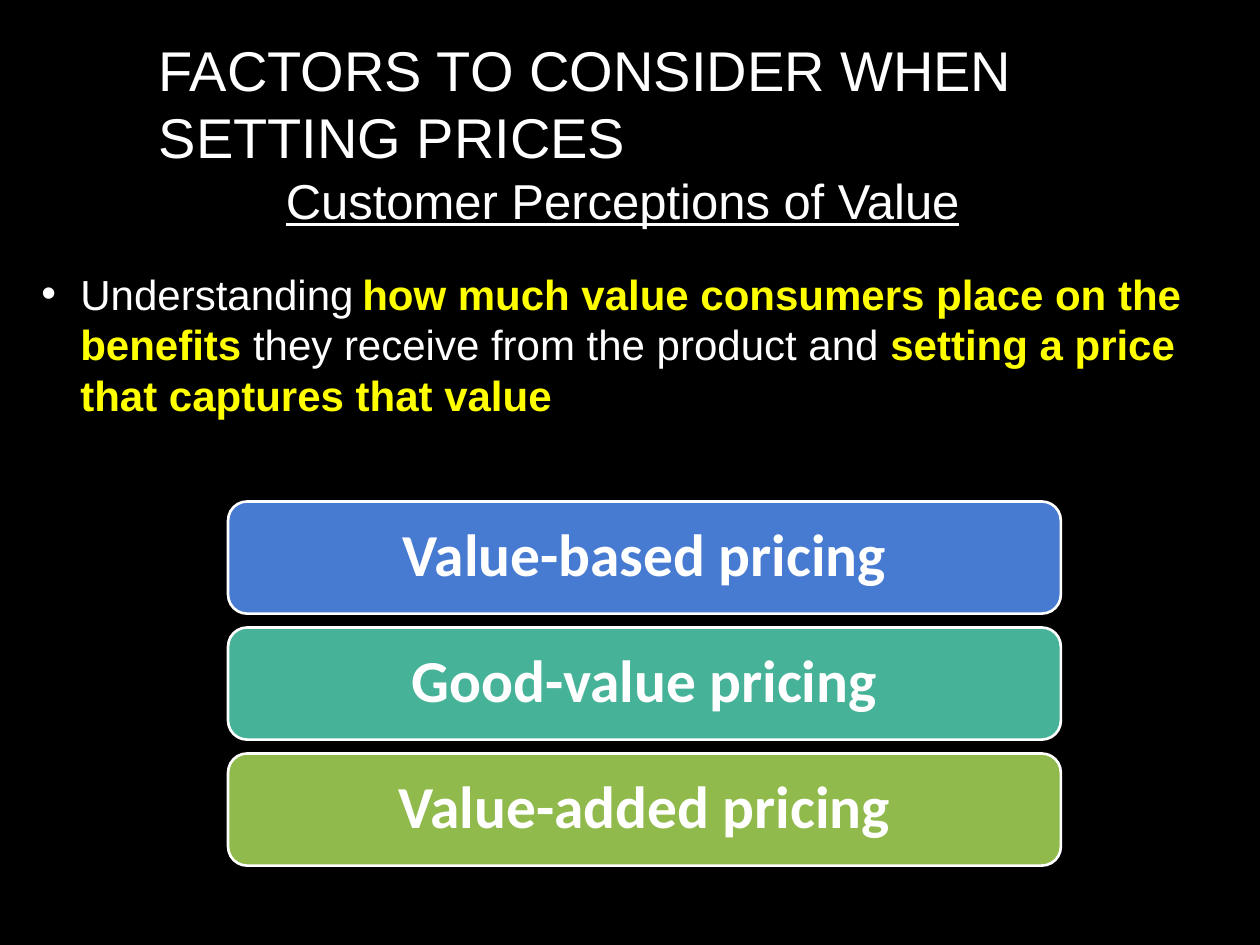
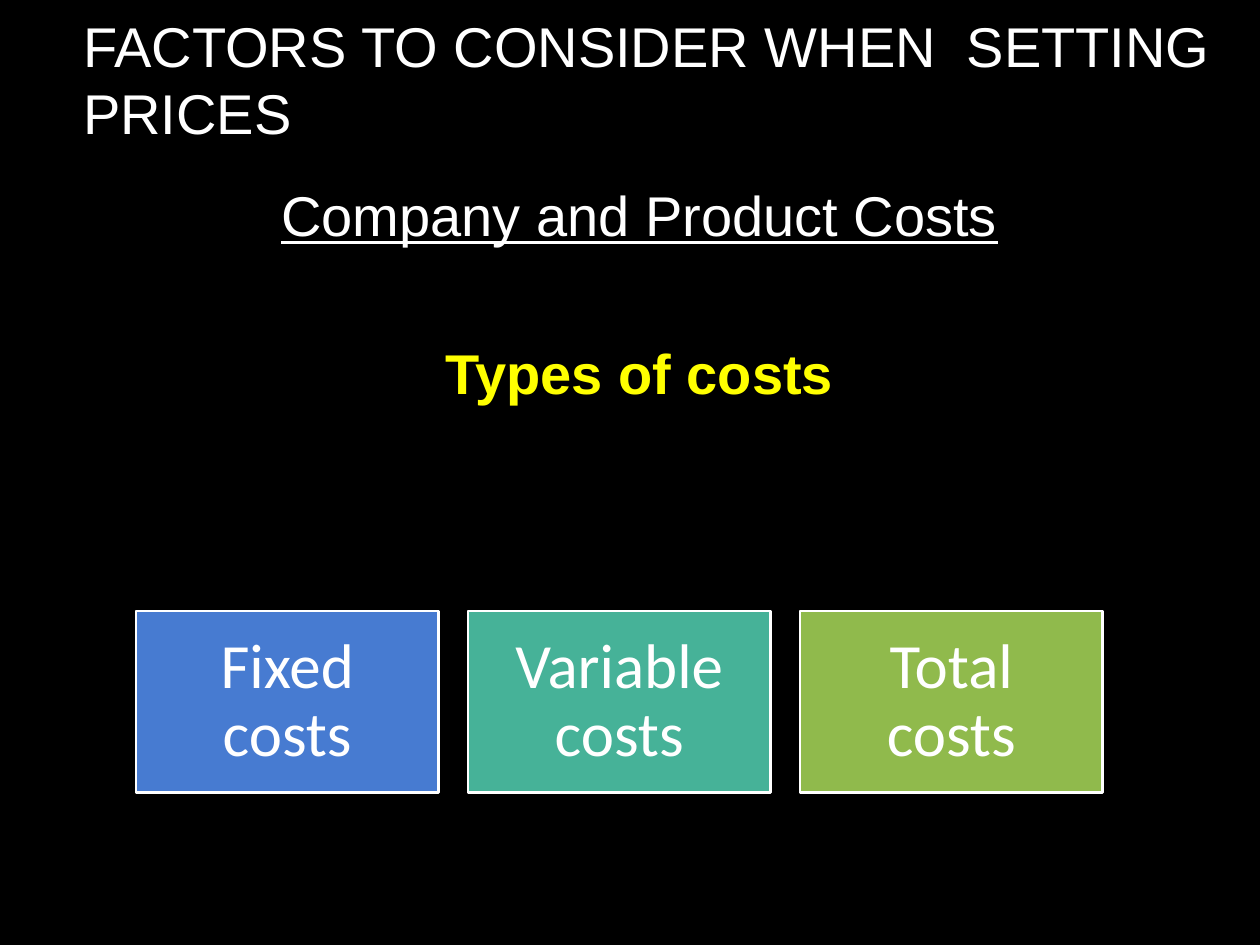
from lxml import etree
from pptx import Presentation
from pptx.dml.color import RGBColor
from pptx.enum.shapes import MSO_SHAPE as Shape
from pptx.enum.text import MSO_ANCHOR as Anchor, MSO_AUTO_SIZE as AutoSize, PP_ALIGN as Align
from pptx.oxml.ns import qn
from pptx.util import Inches, Pt

COLORS = {"black": "000000", "white": "FFFFFF", "yellow": "FFFF00",
          "blue": "477BD1", "teal": "46B298", "green": "90BA4C"}
TILE_COLORS = ("blue", "teal", "green")


def color(name):
    return RGBColor.from_string(COLORS[name])


def style(font, size, name="white", face="Arial", bold=False, underline=False):
    font.name, font.size, font.bold, font.underline = face, Pt(size), bold, underline
    font.color.rgb = color(name)


def add_page(deck, title, box):
    """Black page with its title placed in the given box."""
    page = deck.slides.add_slide(deck.slide_layouts[5])
    page.background.fill.solid()
    page.background.fill.fore_color.rgb = color("black")
    holder = page.shapes.title
    holder.left, holder.top, holder.width, holder.height = map(Inches, box)
    frame = holder.text_frame
    frame.text = title
    frame.word_wrap, frame.auto_size = True, AutoSize.NONE
    frame.vertical_anchor = Anchor.MIDDLE
    frame.paragraphs[0].alignment = Align.LEFT
    style(frame.paragraphs[0].runs[0].font, 32)
    return page


def add_frame(page, box):
    frame = page.shapes.add_textbox(*map(Inches, box)).text_frame
    frame.word_wrap = True
    return frame


def add_bullet(para, indent):
    props = para._p.get_or_add_pPr()
    props.set("marL", str(Inches(indent)))
    props.set("indent", str(-Inches(indent)))
    tint = etree.SubElement(props, qn("a:buClr"))
    etree.SubElement(tint, qn("a:srgbClr"), val=COLORS["white"])
    etree.SubElement(props, qn("a:buFont"), typeface="Arial")
    etree.SubElement(props, qn("a:buChar"), char="•")


def add_tiles(page, labels, box, step, kind, inset, size, bold=False):
    """Equal coloured tiles; box is the first one, step the offset to the next."""
    left, top, width, height = box
    for index, (label, fill) in enumerate(zip(labels, TILE_COLORS)):
        place = (left + index * step[0], top + index * step[1], width, height)
        tile = page.shapes.add_shape(kind, *map(Inches, place))
        tile.shadow.inherit = False
        if kind == Shape.ROUNDED_RECTANGLE:
            tile.adjustments[0] = 0.17
        tile.fill.solid()
        tile.fill.fore_color.rgb = color(fill)
        tile.line.color.rgb = color("white")
        tile.line.width = Pt(1.5)
        frame = tile.text_frame
        frame.text = label
        frame.word_wrap = True
        frame.vertical_anchor = Anchor.MIDDLE
        frame.margin_left = frame.margin_right = Inches(inset)
        frame.margin_top = frame.margin_bottom = Inches(inset)
        para = frame.paragraphs[0]
        para.alignment, para.line_spacing = Align.CENTER, 0.9
        style(para.runs[0].font, size, face="Calibri", bold=bold)


def build_value_page(deck):
    page = add_page(deck, "FACTORS TO CONSIDER WHEN SETTING PRICES", (1.16, 0.19, 8.5, 1.25))

    # Definition with highlighted phrases
    para = add_frame(page, (0.23, 2.08, 9.77, 1.4)).paragraphs[0]
    add_bullet(para, 0.31)
    for text, size, name in (
            ("Understanding", 24, "white"), (" ", 18, "white"),
            ("how much value consumers place on the benefits ", 24, "yellow"),
            ("they receive from the product and ", 24, "white"),
            ("setting a price that captures that value", 24, "yellow")):
        span = para.add_run()
        span.text = text
        style(span.font, size, name, bold=name == "yellow")

    # Subtitle
    subtitle = add_frame(page, (2.17, 1.3, 7.83, 0.42))
    subtitle.text = "Customer Perceptions of Value"
    style(subtitle.paragraphs[0].runs[0].font, 28, underline=True)

    # Pricing approaches, stacked
    add_tiles(page, ("Value-based pricing", "Good-value pricing", "Value-added pricing"),
              (1.81, 3.98, 6.61, 0.89), (0, 1), Shape.ROUNDED_RECTANGLE, 0.14, 34, bold=True)


def build_cost_page(deck):
    page = add_page(deck, "FACTORS TO CONSIDER WHEN  SETTING PRICES", (0.56, 0, 9.44, 1.25))

    # Cost types, side by side
    add_tiles(page, ("Fixed costs", "Variable costs", "Total costs"),
              (1.08, 4.85, 2.4, 1.44), (2.635, 0), Shape.RECTANGLE, 0.15, 36)

    # Subtitle and heading
    frame = add_frame(page, (0.95, 1.38, 8.25, 1.9))
    frame.text = "Company and Product Costs"
    heading = frame.add_paragraph()
    heading.text = "Types of costs"
    heading.space_before = Pt(52)
    for para in frame.paragraphs:
        para.alignment = Align.CENTER
    style(frame.paragraphs[0].runs[0].font, 32, underline=True)
    style(heading.runs[0].font, 32, "yellow", bold=True)


def main():
    deck = Presentation()
    deck.slide_width, deck.slide_height = Inches(10), Inches(7.5)
    build_value_page(deck)
    build_cost_page(deck)
    deck.save("out.pptx")


if __name__ == "__main__":
    main()
